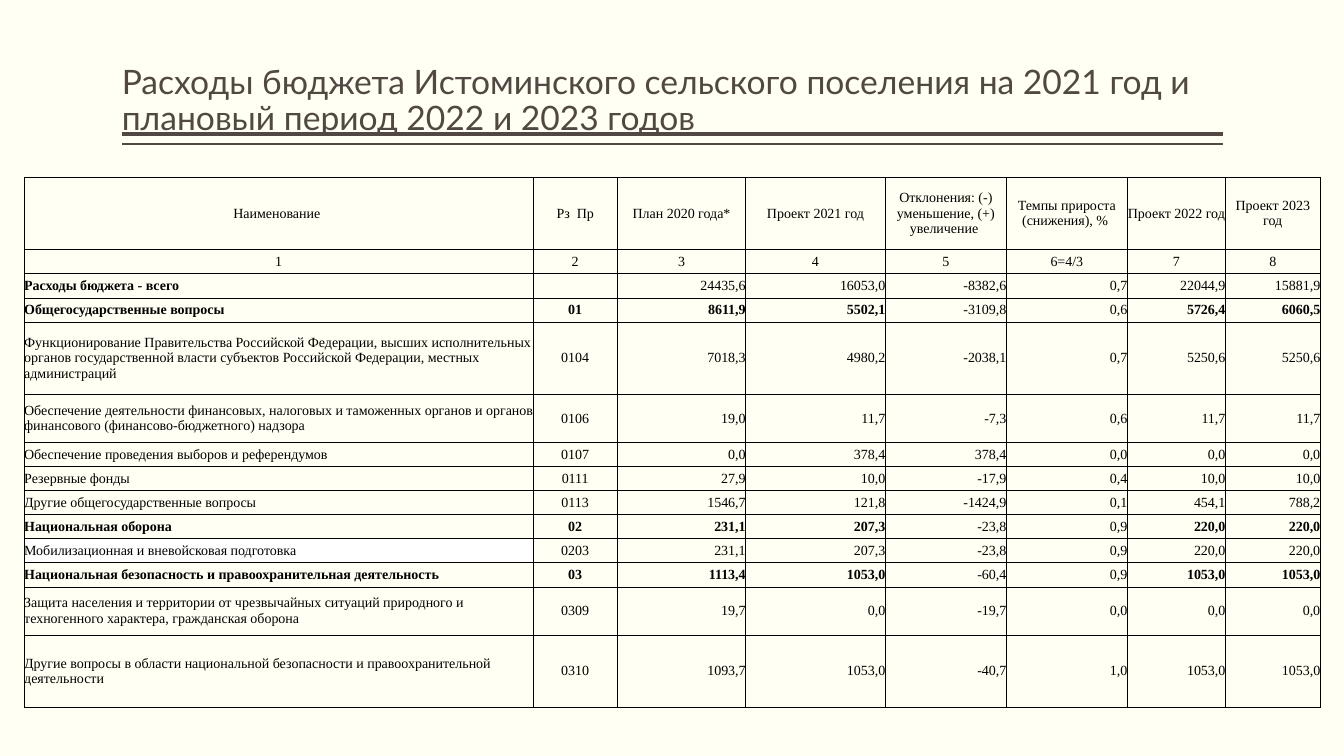
"""Build the slide with the budget expenditure table of the Istomino settlement."""
from dataclasses import dataclass

from lxml import etree
from pptx import Presentation
from pptx.dml.color import RGBColor
from pptx.enum.shapes import MSO_CONNECTOR
from pptx.enum.text import MSO_ANCHOR, MSO_AUTO_SIZE, PP_ALIGN
from pptx.oxml.ns import qn
from pptx.slide import Slide
from pptx.table import _Cell
from pptx.util import Cm, Pt

STRAIGHT = MSO_CONNECTOR.STRAIGHT
MIDDLE, BOTTOM = MSO_ANCHOR.MIDDLE, MSO_ANCHOR.BOTTOM
NO_AUTOFIT = MSO_AUTO_SIZE.NONE
LEFT, CENTER, RIGHT = PP_ALIGN.LEFT, PP_ALIGN.CENTER, PP_ALIGN.RIGHT

COLORS = {"background": "FFFFF3", "title": "514843", "ink": "000000", "highlight": "FFFFFF"}
TITLE = "Расходы бюджета Истоминского сельского поселения на 2021 год и плановый период 2022 и 2023 годов"
COLUMN_WIDTHS = (12.82, 2.13, 3.23, 3.52, 3.05, 3.05, 2.47, 2.39)
TABLE_HEIGHT = 13.36
NAME_ONLY = (0,)
SECTION = (0, 1, 2, 3, 6, 7)


@dataclass(frozen=True)
class Rule:
    """A horizontal line under the title."""
    y: float
    weight: float


@dataclass(frozen=True)
class BudgetRow:
    """A table row, its height in line units and its bold columns."""
    values: tuple[str, ...]
    units: int = 1
    bold: tuple[int, ...] = ()
    header: bool = False
    highlighted: bool = False


RULES = (Rule(3.38, 3), Rule(3.63, 1))
BUDGET = (
    BudgetRow(("Наименование ", "Рз  Пр", "План 2020 года*", "Проект 2021 год",
               "Отклонения: (-) уменьшение, (+) увеличение ", "Темпы прироста (снижения), % ",
               "Проект 2022 год", "Проект 2023 год"), units=3, header=True),
    BudgetRow(("1", "2", "3", "4", "5", "6=4/3", "7", "8"), header=True),
    BudgetRow(("Расходы бюджета - всего", "", "24435,6", "16053,0", "-8382,6", "0,7",
               "22044,9", "15881,9"), bold=NAME_ONLY),
    BudgetRow(("Общегосударственные вопросы", "01", "8611,9", "5502,1", "-3109,8", "0,6",
               "5726,4", "6060,5"), bold=SECTION),
    BudgetRow(("Функционирование Правительства Российской Федерации, высших исполнительных органов "
               "государственной власти субъектов Российской Федерации, местных администраций",
               "0104", "7018,3", "4980,2", "-2038,1", "0,7", "5250,6", "5250,6"), units=3),
    BudgetRow(("Обеспечение деятельности финансовых, налоговых и таможенных органов и органов "
               "финансового (финансово-бюджетного) надзора",
               "0106", "19,0", "11,7", "-7,3", "0,6", "11,7", "11,7"), units=2),
    BudgetRow(("Обеспечение проведения выборов и референдумов", "0107", "0,0", "378,4", "378,4",
               "0,0", "0,0", "0,0")),
    BudgetRow(("Резервные фонды", "0111", "27,9", "10,0", "-17,9", "0,4", "10,0", "10,0")),
    BudgetRow(("Другие общегосударственные вопросы", "0113", "1546,7", "121,8", "-1424,9", "0,1",
               "454,1", "788,2")),
    BudgetRow(("Национальная оборона", "02", "231,1", "207,3", "-23,8", "0,9", "220,0", "220,0"),
              bold=SECTION),
    BudgetRow(("Мобилизационная и вневойсковая подготовка", "0203", "231,1", "207,3", "-23,8",
               "0,9", "220,0", "220,0"), highlighted=True),
    BudgetRow(("Национальная безопасность и правоохранительная деятельность", "03", "1113,4",
               "1053,0", "-60,4", "0,9", "1053,0", "1053,0"), bold=SECTION),
    BudgetRow(("Защита населения и территории от чрезвычайных ситуаций природного и техногенного "
               "характера, гражданская оборона",
               "0309", "19,7", "0,0", "-19,7", "0,0", "0,0", "0,0"), units=2),
    BudgetRow(("Другие вопросы в области национальной безопасности и правоохранительной деятельности",
               "0310", "1093,7", "1053,0", "-40,7", "1,0", "1053,0", "1053,0"), units=3),
)


def color(name: str) -> RGBColor:
    """Return a named colour of the slide."""
    return RGBColor.from_string(COLORS[name])


def add_title(slide: Slide) -> None:
    """Place and format the title."""
    title = slide.shapes.title
    title.left, title.top, title.width, title.height = Cm(3.07), Cm(0), Cm(28.91), Cm(3.61)
    frame = title.text_frame
    frame.text = TITLE
    frame.word_wrap, frame.auto_size, frame.vertical_anchor = True, NO_AUTOFIT, BOTTOM
    frame.margin_left = frame.margin_right = 0
    heading = frame.paragraphs[0]
    heading.alignment, heading.line_spacing = LEFT, 0.9
    heading.font.name, heading.font.size = "Lato", Pt(24)
    heading.font.color.rgb = color("title")


def add_rule(slide: Slide, rule: Rule) -> None:
    """Draw one line under the title."""
    line = slide.shapes.add_connector(STRAIGHT, Cm(30.81), Cm(rule.y), Cm(3.07), Cm(rule.y))
    line.line.color.rgb = color("title")
    line.line.width = Pt(rule.weight)
    etree.SubElement(line._element.spPr, qn("a:effectLst"))


def add_borders(cell: _Cell) -> None:
    """Outline a cell on all four sides."""
    properties = cell._tc.get_or_add_tcPr()
    for position, side in enumerate(("a:lnL", "a:lnR", "a:lnT", "a:lnB")):
        border = etree.Element(qn(side), w=str(Pt(0.5)))
        fill = etree.SubElement(border, qn("a:solidFill"))
        etree.SubElement(fill, qn("a:srgbClr"), val=COLORS["ink"])
        properties.insert(position, border)


def fill_cell(cell: _Cell, row: BudgetRow, column: int) -> None:
    """Write and format one cell of a budget row."""
    cell.margin_left = cell.margin_right = cell.margin_top = cell.margin_bottom = 0
    cell.vertical_anchor = MIDDLE
    if row.highlighted and column == 0:
        cell.fill.solid()
        cell.fill.fore_color.rgb = color("highlight")
    else:
        cell.fill.background()
    add_borders(cell)
    cell.text = row.values[column]
    entry = cell.text_frame.paragraphs[0]
    if row.header or column == 1:
        entry.alignment = CENTER
    else:
        entry.alignment = RIGHT if column else LEFT
    entry.font.name, entry.font.size = "Times New Roman", Pt(10)
    entry.font.bold = column in row.bold
    entry.font.color.rgb = color("ink")
    if not row.values[column]:
        etree.SubElement(entry._p, qn("a:endParaRPr"), sz="1000")


def add_budget_table(slide: Slide) -> None:
    """Draw the expenditure table."""
    frame = slide.shapes.add_table(len(BUDGET), len(COLUMN_WIDTHS), Cm(0.61), Cm(4.47),
                                   Cm(sum(COLUMN_WIDTHS)), Cm(TABLE_HEIGHT))
    table = frame.table
    table.first_row = table.horz_banding = False
    for column, width in zip(table.columns, COLUMN_WIDTHS):
        column.width = Cm(width)
    unit = TABLE_HEIGHT / sum(row.units for row in BUDGET)
    for index, row in enumerate(BUDGET):
        table.rows[index].height = Cm(unit * row.units)
        for column in range(len(row.values)):
            fill_cell(table.cell(index, column), row, column)


def main() -> None:
    """Build and save the presentation."""
    presentation = Presentation()
    presentation.slide_width, presentation.slide_height = Cm(33.87), Cm(19.05)
    slide = presentation.slides.add_slide(presentation.slide_layouts[5])
    slide.background.fill.solid()
    slide.background.fill.fore_color.rgb = color("background")
    add_title(slide)
    for rule in RULES:
        add_rule(slide, rule)
    add_budget_table(slide)
    presentation.save("out.pptx")


if __name__ == "__main__":
    main()
